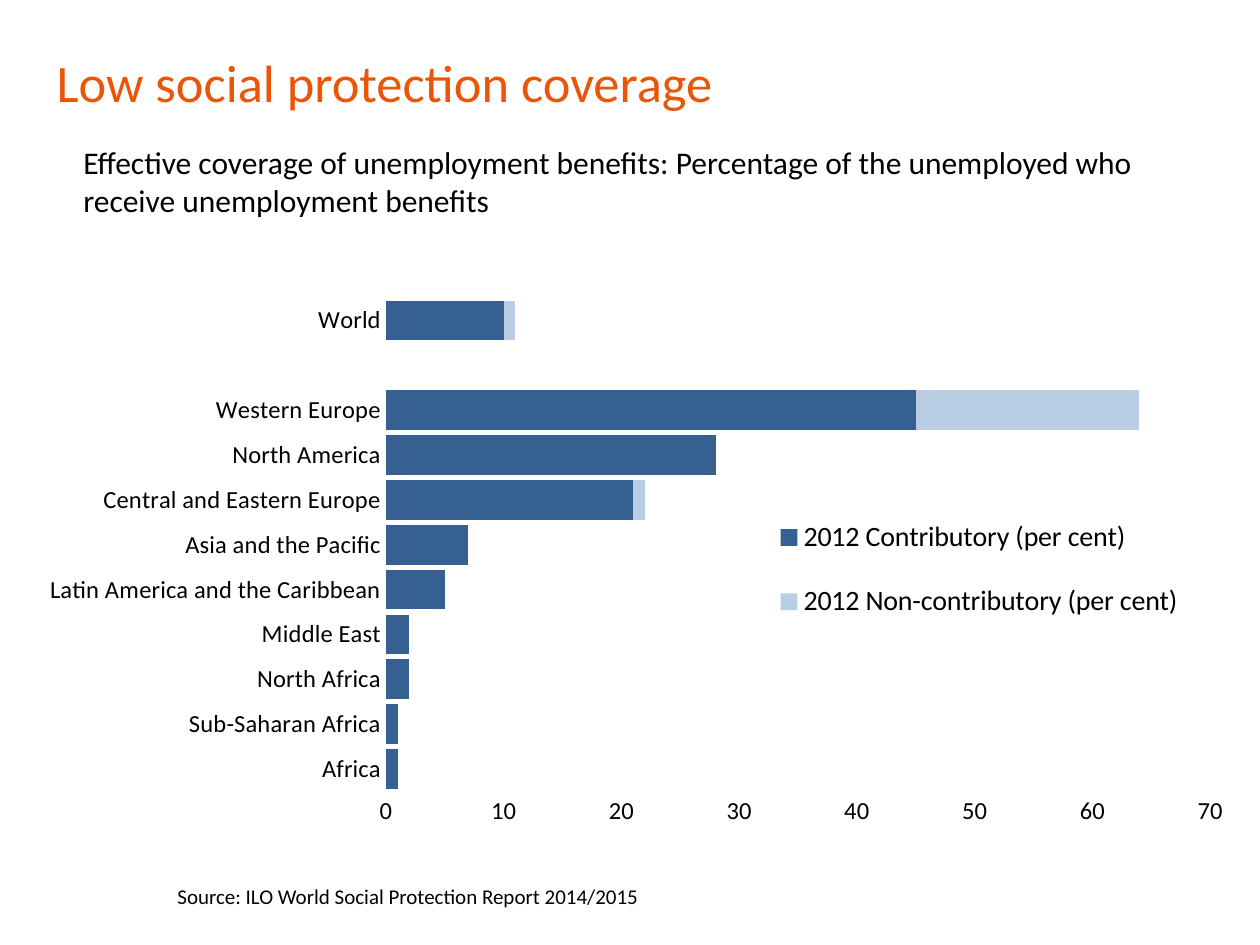
from lxml import etree
from pptx import Presentation
from pptx.chart.data import CategoryChartData
from pptx.dml.color import RGBColor
from pptx.enum.chart import XL_CHART_TYPE, XL_LEGEND_POSITION, XL_TICK_MARK
from pptx.enum.text import MSO_ANCHOR, MSO_AUTO_SIZE, PP_ALIGN
from pptx.oxml.ns import qn
from pptx.util import Emu, Pt

ORANGE = RGBColor(0xEA, 0x56, 0x08)
BLACK = RGBColor(0x00, 0x00, 0x00)
WHITE = RGBColor(0xFF, 0xFF, 0xFF)
BLUE = RGBColor(0x37, 0x60, 0x92)
PALE_BLUE = RGBColor(0xB9, 0xCD, 0xE5)
FONT = "Calibri"
PX = 914400 / 126


def box(*lengths):
    return [Emu(round(n * PX)) for n in lengths]


def set_layout(element, before, x, y, w, h, inner=False):
    """Place a plot area or legend by fractions of the chart."""
    for old in element.findall(qn("c:layout")):
        element.remove(old)
    layout = etree.Element(qn("c:layout"))
    manual = etree.SubElement(layout, qn("c:manualLayout"))
    values = {"xMode": "edge", "yMode": "edge", "x": x, "y": y, "w": w, "h": h}
    if inner:
        values = {"layoutTarget": "inner", **values}
    for tag, value in values.items():
        etree.SubElement(manual, qn(f"c:{tag}")).set("val", str(value))
    element.find(qn(before)).addprevious(layout)


prs = Presentation()
prs.slide_width, prs.slide_height = box(1260, 945)
s = prs.slides.add_slide(prs.slide_layouts[5])

# Title
title = s.shapes.title
title.left, title.top, title.width, title.height = box(44, 43, 1183, 77)
tf = title.text_frame
tf.auto_size = MSO_AUTO_SIZE.NONE
tf.vertical_anchor = MSO_ANCHOR.MIDDLE
p = tf.paragraphs[0]
p.alignment = PP_ALIGN.LEFT
r = p.add_run()
r.text = "Low social protection coverage"
r.font.name, r.font.size = FONT, Pt(30)
r.font.color.rgb = ORANGE

# Stacked bar chart, categories from bottom to top
rows = [
    ("Africa", 1, 0),
    ("Sub-Saharan Africa", 1, 0),
    ("North Africa", 2, 0),
    ("Middle East", 2, 0),
    ("Latin America and the Caribbean", 5, 0),
    ("Asia and the Pacific", 7, 0),
    ("Central and Eastern Europe", 21, 1),
    ("North America", 28, 0),
    ("Western Europe", 45, 19),
    ("", None, None),
    ("World", 10, 1),
]
names, contributory, non_contributory = zip(*rows)
data = CategoryChartData(number_format="0")
data.categories = names
data.add_series("2012 Contributory (per cent)", contributory)
data.add_series("2012 Non-contributory (per cent)", non_contributory)
chart = s.shapes.add_chart(
    XL_CHART_TYPE.BAR_STACKED, *box(35, 204, 1276, 636), data).chart
chart.has_title = False
chart.font.name, chart.font.size = FONT, Pt(10)
chart.font.color.rgb = BLACK

plot = chart.plots[0]
plot.gap_width, plot.overlap = 13, 100
plot.vary_by_categories = False
for series, color in zip(plot.series, (BLUE, PALE_BLUE)):
    series.format.fill.solid()
    series.format.fill.fore_color.rgb = color

# Axes
for axis in (chart.category_axis, chart.value_axis):
    axis.major_tick_mark = XL_TICK_MARK.NONE
    axis.format.line.fill.background()
    axis.tick_labels.font.size = Pt(14)
    axis.tick_labels.font.name = FONT
    axis.tick_labels.font.color.rgb = BLACK
axis = chart.value_axis
axis.minimum_scale, axis.maximum_scale, axis.major_unit = 0, 70, 10
axis.tick_labels.number_format = "0"
axis.tick_labels.number_format_is_linked = False
axis.has_major_gridlines = True
axis.major_gridlines.format.line.color.rgb = WHITE
axis.major_gridlines.format.line.width = Pt(0.75)

# Legend over the empty part of the plot
chart.has_legend = True
legend = chart.legend
legend.position = XL_LEGEND_POSITION.RIGHT
legend.include_in_layout = False
legend.font.name, legend.font.size = FONT, Pt(16)
legend.font.color.rgb = BLACK
chart_xml = chart.element.find(qn("c:chart"))
set_layout(chart_xml.find(qn("c:plotArea")), "c:barChart",
           0.275, 0.148, 0.646, 0.776, inner=True)
set_layout(chart_xml.find(qn("c:legend")), "c:overlay", 0.57, 0.45, 0.34, 0.25)

# Subtitle and source
for text, size, place in (
    ("Effective coverage of unemployment benefits: Percentage of the "
     "unemployed who receive unemployment benefits", 18, (71, 137, 1131, 89)),
    ("Source: ILO World Social Protection Report 2014/2015", 12,
     (165, 877, 740, 38)),
):
    tf = s.shapes.add_textbox(*box(*place)).text_frame
    tf.word_wrap = True
    r = tf.paragraphs[0].add_run()
    r.text = text
    r.font.name, r.font.size = FONT, Pt(size)
    r.font.color.rgb = BLACK

prs.save("out.pptx")
